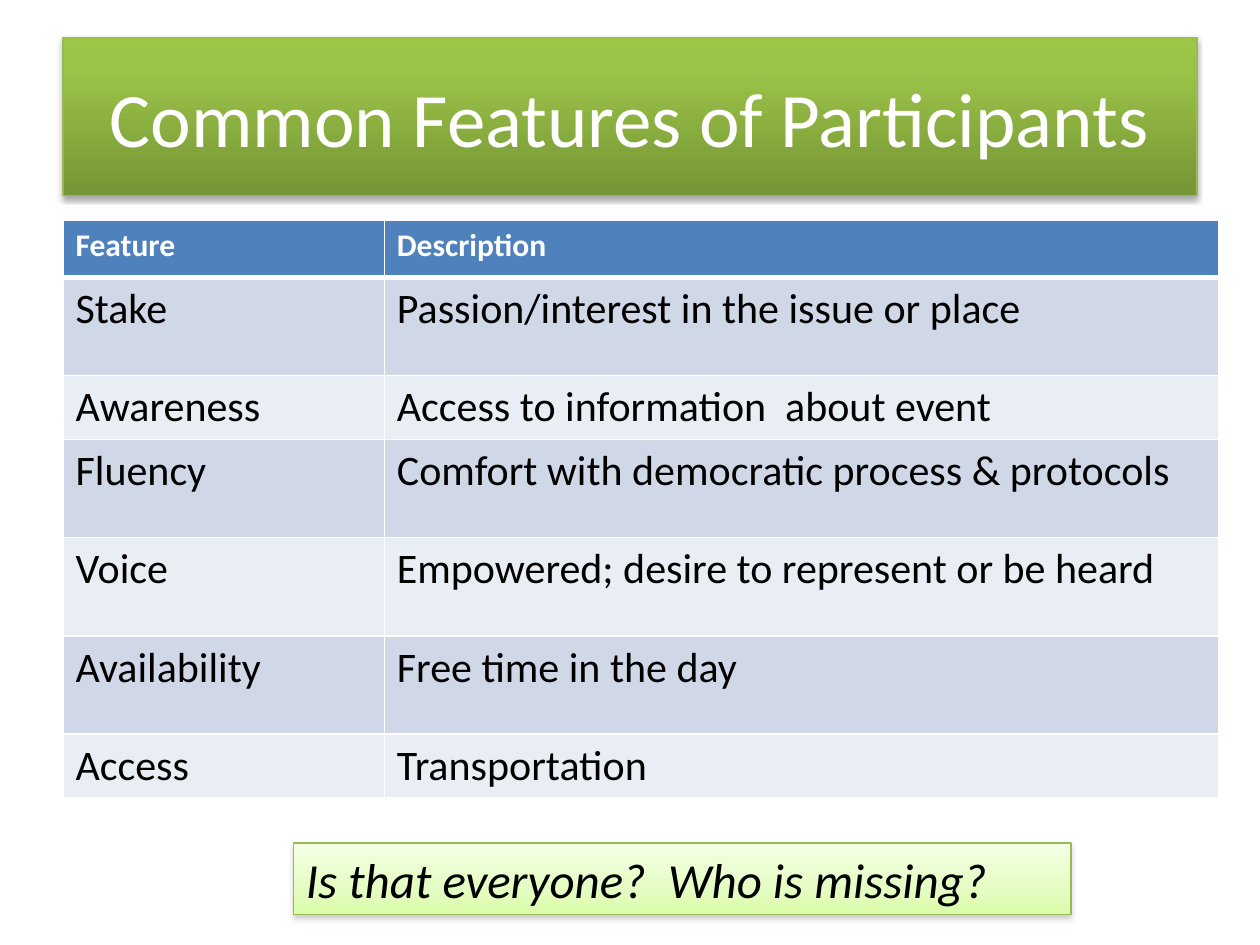
from dataclasses import dataclass
from lxml.etree import SubElement as Sub
from pptx import Presentation
from pptx.dml.color import RGBColor as Rgb
from pptx.enum.shapes import MSO_SHAPE as Shape
from pptx.enum.text import MSO_ANCHOR as Anchor, PP_ALIGN as Align
from pptx.oxml.ns import qn
from pptx.util import Pt

SCALE = 9144


@dataclass(frozen=True)
class Theme:
    font: str = "Calibri"
    white: str = "FFFFFF"
    black: str = "000000"
    gray: str = "808080"
    edge: str = "98B954"
    head: str = "4F81BD"
    bands: tuple = ("D0D8E8", "E9EDF4")
    green: tuple = ((0, "9CC746"), (20, "9BC348"), (100, "769535"))
    pale: tuple = ((0, "F5FFE6"), (65, "E4FDC2"), (100, "DAFDA7"))
    title: int = 44
    note: int = 28
    body: int = 24
    label: int = 18


THEME = Theme()

ROWS = (
    ("Feature", "Description", 45),
    ("Stake", "Passion/interest in the issue or place", 78),
    ("Awareness", "Access to information  about event", 50),
    ("Fluency", "Comfort with democratic process & protocols", 78),
    ("Voice", "Empowered; desire to represent or be heard", 78),
    ("Availability", "Free time in the day", 78),
    ("Access", "Transportation", 50),
)


def px(n):
    return n * SCALE


def style(para, size, color, bold=False, italic=False):
    font = para.font
    font.name = THEME.font
    font.size = Pt(size)
    font.bold = bold
    font.italic = italic
    font.color.rgb = Rgb.from_string(color)


def tint(node, color):
    return Sub(node, qn("a:srgbClr"), val=color)


def shade(shape, stops):
    shape.fill.gradient()
    shape.fill.gradient_angle = 270
    group = next(shape._element.spPr.iter(qn("a:gsLst")))
    for old in list(group):
        group.remove(old)
    for pos, color in stops:
        tint(Sub(group, qn("a:gs"), pos=str(pos * 1000)), color)


def drop(shape, color, alpha, dist):
    shape.shadow.inherit = False
    effects = shape._element.spPr.find(qn("a:effectLst"))
    outer = Sub(effects, qn("a:outerShdw"), blurRad=str(Pt(3.1)),
                dist=str(Pt(dist)), dir="5400000", rotWithShape="0")
    Sub(tint(outer, color), qn("a:alpha"), val=str(alpha * 1000))


def panel(slide, box, text, stops, shadow):
    shape = slide.shapes.add_shape(Shape.RECTANGLE, *map(px, box))
    shade(shape, stops)
    shape.line.color.rgb = Rgb.from_string(THEME.edge)
    shape.line.width = Pt(0.75)
    drop(shape, *shadow)
    shape.text_frame.word_wrap = True
    shape.text_frame.text = text
    return shape.text_frame


def banner(slide, box):
    frame = panel(slide, box, "Common Features of Participants",
                  THEME.green, (THEME.black, 35, 1.8))
    frame.vertical_anchor = Anchor.MIDDLE
    para = frame.paragraphs[0]
    para.alignment = Align.CENTER
    style(para, THEME.title, THEME.white)


def note(slide, box):
    frame = panel(slide, box, "Is that everyone?  Who is missing?",
                  THEME.pale, (THEME.gray, 38, 1.6))
    frame.vertical_anchor = Anchor.TOP
    para = frame.paragraphs[0]
    para.alignment = Align.LEFT
    style(para, THEME.note, THEME.black, italic=True)


def border(cell, top, low):
    props = cell._tc.get_or_add_tcPr()
    for i, (side, width) in enumerate(zip("LRTB", (1, 1, top, low))):
        line = Sub(props, qn(f"a:ln{side}"), w=str(Pt(width)))
        tint(Sub(line, qn("a:solidFill")), THEME.white)
        props.insert(i, line)


def grid(slide, box, split):
    table = slide.shapes.add_table(len(ROWS), 2, *map(px, box)).table
    for col, width in zip(table.columns, (split, box[2] - split)):
        col.width = px(width)
    for r, (*texts, high) in enumerate(ROWS):
        table.rows[r].height = px(high)
        fill = THEME.bands[(r - 1) % 2] if r else THEME.head
        for cell, text in zip(table.rows[r].cells, texts):
            cell.text = text
            cell.fill.solid()
            cell.fill.fore_color.rgb = Rgb.from_string(fill)
            border(cell, 3 if r == 1 else 1, 1 if r else 3)
            para = cell.text_frame.paragraphs[0]
            if r:
                style(para, THEME.body, THEME.black)
            else:
                style(para, THEME.label, THEME.white, bold=True)


def main():
    deck = Presentation()
    deck.slide_width, deck.slide_height = px(1000), px(750)
    slide = deck.slides.add_slide(deck.slide_layouts[6])
    grid(slide, (50, 175, 917, sum(row[-1] for row in ROWS)), 255)
    banner(slide, (50, 30, 900, 125))
    note(slide, (233, 669, 617, 57))
    deck.save("out.pptx")


if __name__ == "__main__":
    main()
